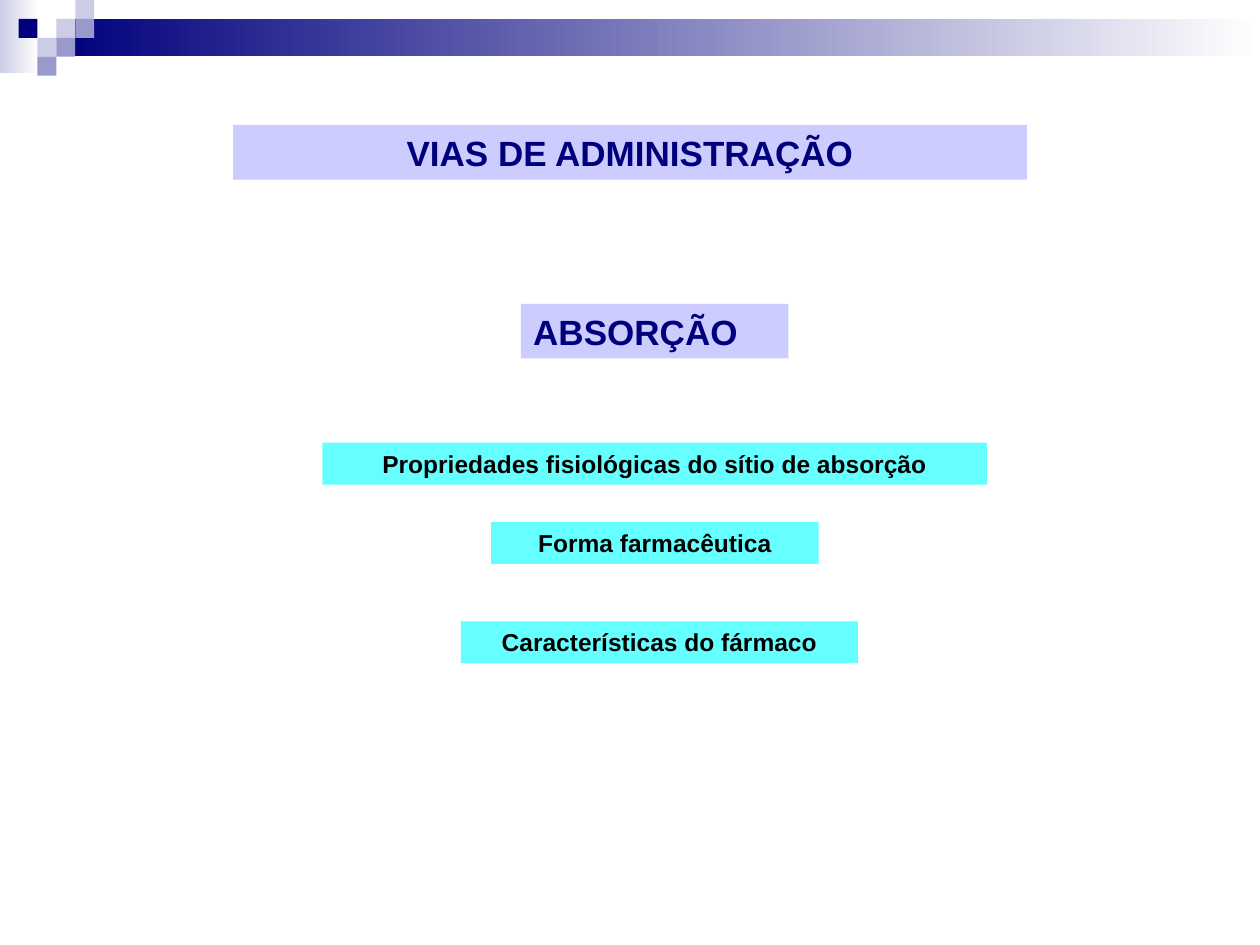
from pptx import Presentation
from pptx.dml.color import RGBColor
from pptx.enum import shapes, text
from pptx.util import Pt

NAVY, LILAC, PALE, MID = "00007D", "CCCCFF", "CCCCE6", "9999CC"
CYAN, BLACK, WHITE = "66FFFF", "000000", "FFFFFF"


def color(hex_code):
    return RGBColor.from_string(hex_code)


def add_block(left, top, width, height, start, end=None):
    """Borderless rectangle, solid or fading from left to right."""
    block = slide.shapes.add_shape(
        shapes.MSO_SHAPE.RECTANGLE, Pt(left), Pt(top), Pt(width), Pt(height))
    block.shadow.inherit = False
    block.line.fill.background()
    if end:
        block.fill.gradient()
        block.fill.gradient_angle = 0
        for stop, shade, position in zip(block.fill.gradient_stops, (start, end), (0, 1)):
            stop.color.rgb = color(shade)
            stop.position = position
    else:
        block.fill.solid()
        block.fill.fore_color.rgb = color(start)
    return block


prs = Presentation()
prs.slide_width, prs.slide_height = Pt(720), Pt(540)
slide = prs.slides.add_slide(prs.slide_layouts[6])

# Header fades
add_block(0, 0, 22, 41.8, PALE, WHITE)
add_block(32.4, 10.8, 687.6, 21.4, NAVY, WHITE)

# Header mosaic: column, row, shade
tile = 10.8
mosaic = [(2, 1, PALE), (3, 0, PALE), (3, 1, MID), (1, 2, PALE),
          (0, 1, NAVY), (2, 2, MID), (1, 3, MID)]
for column, row, shade in mosaic:
    add_block(10.6 + column * tile, row * tile, tile, tile, shade)

# Title, topic and factors: wording, left, top, width, height, fill, ink, size, alignment
CENTER, LEFT = text.PP_ALIGN.CENTER, text.PP_ALIGN.LEFT
labels = [
    ("VIAS DE ADMINISTRAÇÃO", 133.2, 71.4, 453.6, 31.2, LILAC, NAVY, 20, CENTER),
    ("ABSORÇÃO", 297.6, 173.6, 153, 31.2, LILAC, NAVY, 20, LEFT),
    ("Propriedades fisiológicas do sítio de absorção",
     184.2, 253, 379.8, 24, CYAN, BLACK, 14, CENTER),
    ("Forma farmacêutica", 280.6, 298.2, 187.2, 24, CYAN, BLACK, 14, CENTER),
    ("Características do fármaco", 263.4, 355, 226.8, 24, CYAN, BLACK, 14, CENTER),
]
for wording, left, top, width, height, fill, ink, size, alignment in labels:
    frame = add_block(left, top, width, height, fill).text_frame
    frame.word_wrap = True
    frame.vertical_anchor = text.MSO_ANCHOR.TOP
    paragraph = frame.paragraphs[0]
    paragraph.text = wording
    paragraph.alignment = alignment
    paragraph.font.name = "Arial"
    paragraph.font.size = Pt(size)
    paragraph.font.bold = True
    paragraph.font.color.rgb = color(ink)

prs.save("out.pptx")
